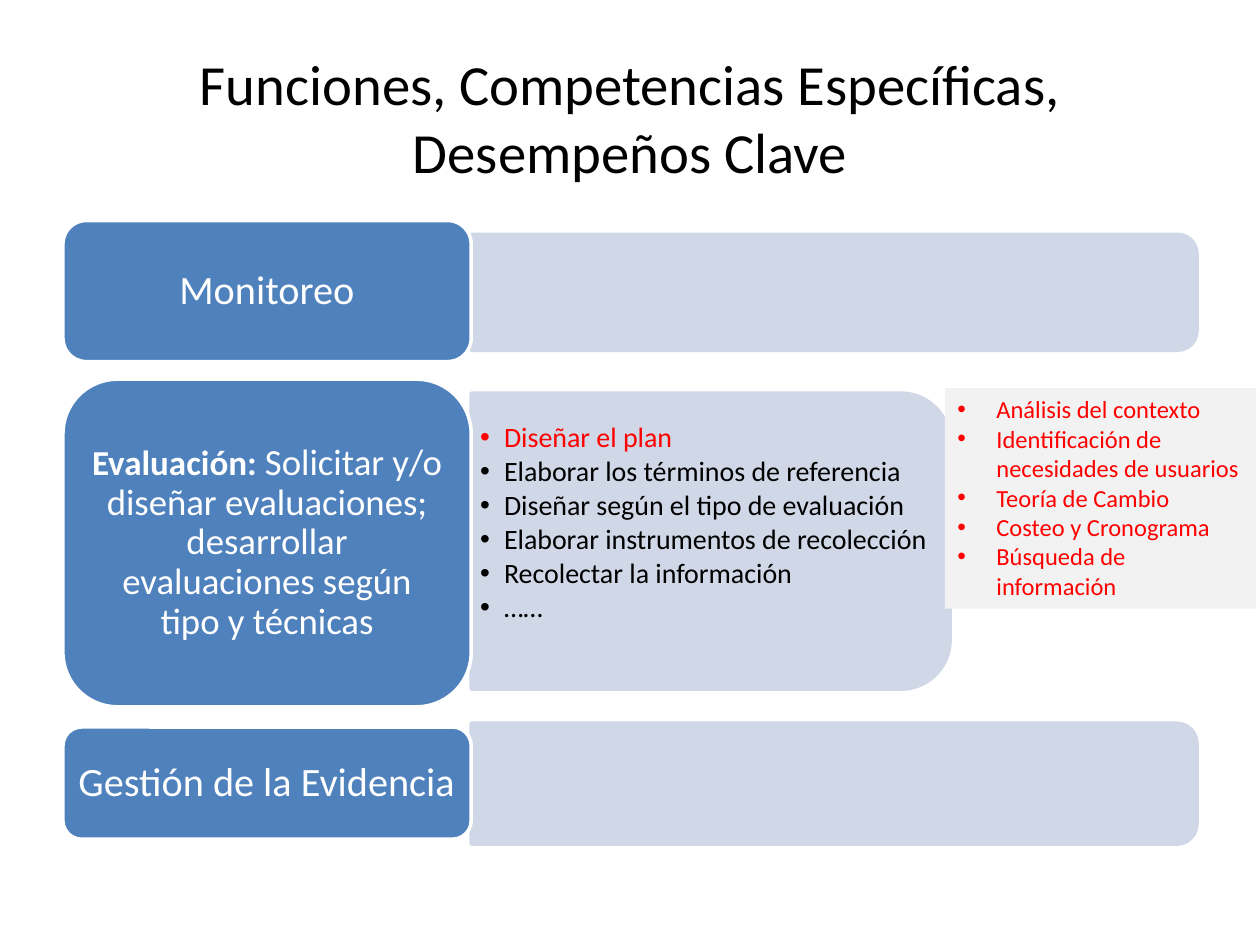
from lxml import etree
from pptx import Presentation
from pptx.dml.color import RGBColor
from pptx.enum import shapes, text
from pptx.oxml import ns
from pptx.util import Inches, Pt

BLACK = RGBColor(0, 0, 0)
WHITE = RGBColor(255, 255, 255)
RED = RGBColor(255, 0, 0)
BLUE = RGBColor(0x4F, 0x81, 0xBD)
PALE_BLUE = RGBColor(0xD0, 0xD8, 0xE8)
PALE_GREY = RGBColor(0xF2, 0xF2, 0xF2)

FONT = "Calibri"
LABEL_LEFT, LABEL_WIDTH = 0.5, 3.24
BAR_LEFT = LABEL_LEFT + LABEL_WIDTH

TITLE = "Funciones, Competencias Específicas, Desempeños Clave"
# label top and height, bar top, width and height, label size, label spans
ROWS = [
    (1.75, 1.12, 1.86, 5.76, 0.92, 23, ["Monitoreo"]),
    (3.01, 2.6, 3.12, 3.8, 2.35, 21,
     [("Evaluación: ", {"size": 20, "bold": True}),
      "Solicitar y/o diseñar evaluaciones; desarrollar evaluaciones según tipo y técnicas"]),
    (5.77, 0.89, 5.74, 5.76, 0.96, 23, ["Gestión de la Evidencia"]),
]
TASKS = [
    [("Diseñar el plan", {"color": RED})],
    ["Elaborar los términos de referencia"],
    ["Diseñar según el tipo de evaluación"],
    ["Elaborar instrumentos de recolección"],
    ["Recolectar la información"],
    ["……"],
]
PLAN_STEPS = [
    ["Análisis del contexto"],
    ["Identificación de necesidades de usuarios"],
    ["Teoría de Cambio"],
    ["Costeo y Cronograma"],
    ["Búsqueda de información"],
]


def set_bullet(para, indent):
    props = para._p.get_or_add_pPr()
    props.set("marL", str(Inches(indent)))
    props.set("indent", str(-Inches(indent)))
    etree.SubElement(props, ns.qn("a:buFont"), typeface="Arial")
    etree.SubElement(props, ns.qn("a:buChar"), char="•")


def set_opacity(color_format, percent):
    color = color_format._xFill.find(ns.qn("a:srgbClr"))
    etree.SubElement(color, ns.qn("a:alpha"), val=str(percent * 1000))


def write(shape, paragraphs, *, size, color, align=text.PP_ALIGN.LEFT,
          anchor=text.MSO_ANCHOR.MIDDLE, insets=(0.1, 0.05, 0.1, 0.05),
          line_spacing=1.0, space_after=0, bullet_indent=None):
    """Fill a shape; each paragraph lists spans, as text or (text, overrides)."""
    frame = shape.text_frame
    frame.word_wrap = True
    frame.vertical_anchor = anchor
    (frame.margin_left, frame.margin_top,
     frame.margin_right, frame.margin_bottom) = map(Inches, insets)
    for index, spans in enumerate(paragraphs):
        para = frame.add_paragraph() if index else frame.paragraphs[0]
        para.alignment = align
        para.line_spacing = line_spacing
        para.space_after = Pt(space_after)
        if bullet_indent:
            set_bullet(para, bullet_indent)
        for item in spans:
            words, changes = (item, {}) if isinstance(item, str) else item
            span = para.add_run()
            span.text = words
            span.font.name = FONT
            span.font.size = Pt(changes.get("size", size))
            span.font.bold = changes.get("bold", False)
            span.font.color.rgb = changes.get("color", color)


def add_box(page, kind, left, top, width, height, fill, line=None):
    box = page.shapes.add_shape(
        kind, Inches(left), Inches(top), Inches(width), Inches(height))
    box.shadow.inherit = False
    box.fill.solid()
    box.fill.fore_color.rgb = fill
    if line is None:
        box.line.fill.background()
    else:
        box.line.color.rgb = line
        box.line.width = Pt(2)
    return box


def add_text_box(page, left, top, width, height, paragraphs, **style):
    box = page.shapes.add_textbox(
        Inches(left), Inches(top), Inches(width), Inches(height))
    write(box, paragraphs, **style)


def add_bar(page, left, top, width, height):
    """Add a bar with rounded right corners: a shape turned by 90 degrees."""
    shift = (width - height) / 2
    bar = add_box(page, shapes.MSO_SHAPE.ROUND_2_SAME_RECTANGLE,
                  left + shift, top - shift, height, width, PALE_BLUE, PALE_BLUE)
    bar.rotation = 90
    set_opacity(bar.fill._fill, 90) if hasattr(bar.fill._fill, "_xFill") else None
    set_opacity(bar.line.fill._fill, 90) if hasattr(bar.line.fill._fill, "_xFill") else None


def add_row(page, label_top, label_height, bar_top, bar_width, bar_height, size, spans):
    add_bar(page, BAR_LEFT, bar_top, bar_width, bar_height)
    label = add_box(page, shapes.MSO_SHAPE.ROUNDED_RECTANGLE,
                    LABEL_LEFT, label_top, LABEL_WIDTH, label_height, BLUE, WHITE)
    write(label, [spans], size=size, color=WHITE, align=text.PP_ALIGN.CENTER,
          insets=(0.08, 0.04, 0.08, 0.04), line_spacing=0.9)


def main():
    deck = Presentation()
    deck.slide_width, deck.slide_height = Inches(10), Inches(7.5)
    page = deck.slides.add_slide(deck.slide_layouts[6])

    add_text_box(page, 0.5, 0.3, 9, 1.25, [[TITLE]], size=32.4, color=BLACK,
                 align=text.PP_ALIGN.CENTER)
    for row in ROWS:
        add_row(page, *row)
    add_text_box(page, BAR_LEFT, 3.23, 3.69, 2.12, TASKS, size=16, color=BLACK,
                 insets=(0.07, 0.03, 0.07, 0.3), line_spacing=0.9,
                 space_after=2.2, bullet_indent=0.19)
    note = add_box(page, shapes.MSO_SHAPE.RECTANGLE, 7.5, 3.08, 2.47, 1.75, PALE_GREY)
    write(note, PLAN_STEPS, size=14, color=RED, anchor=text.MSO_ANCHOR.TOP,
          bullet_indent=0.31)

    deck.save("out.pptx")


if __name__ == "__main__":
    main()
